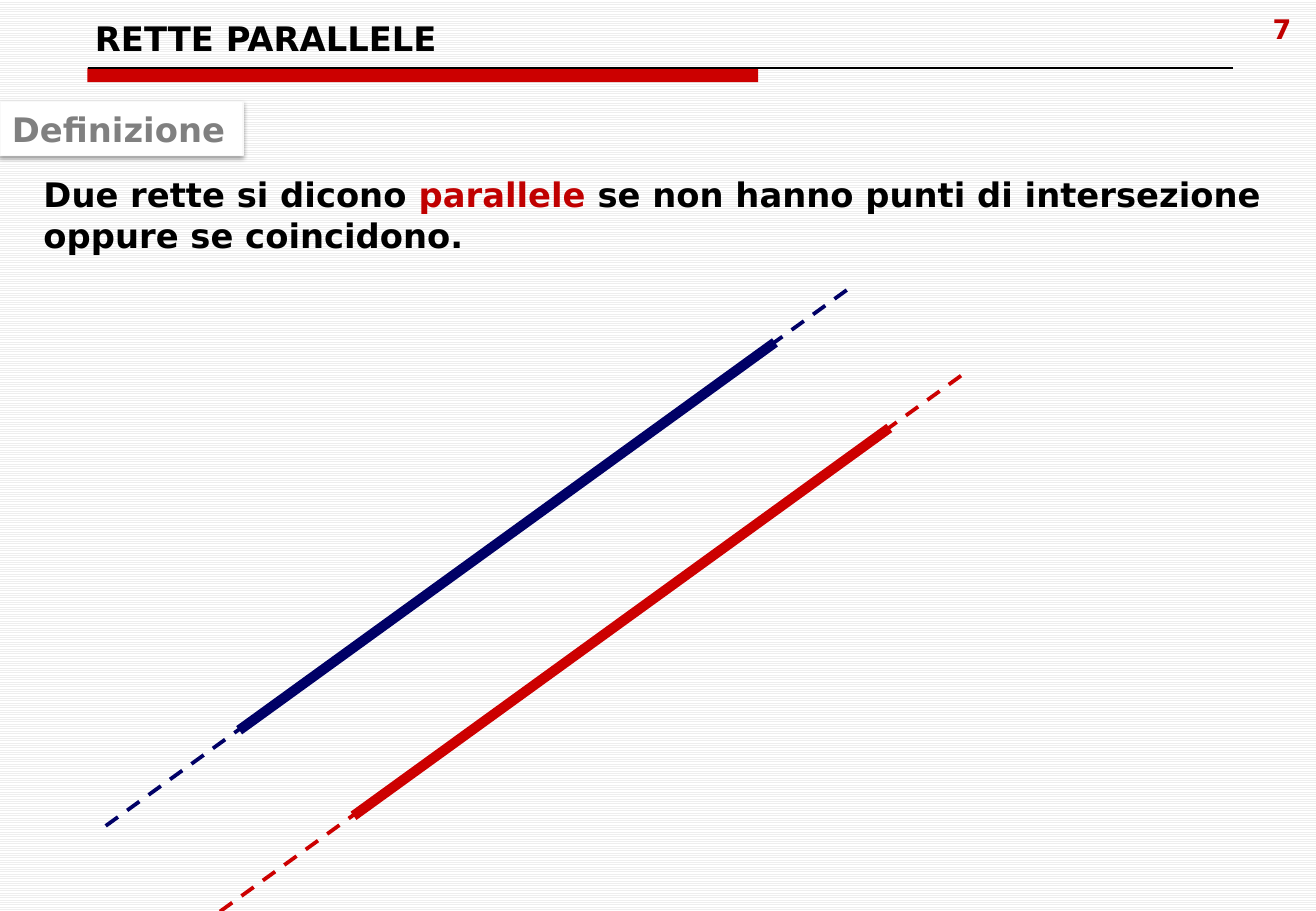
from lxml.etree import SubElement
from pptx import Presentation
from pptx.dml.color import RGBColor
from pptx.enum.dml import MSO_LINE, MSO_PATTERN
from pptx.enum.shapes import MSO_CONNECTOR, MSO_SHAPE
from pptx.enum.text import MSO_ANCHOR, MSO_AUTO_SIZE, PP_ALIGN
from pptx.oxml import parse_xml
from pptx.oxml.ns import nsdecls, qn
from pptx.util import Cm, Pt

BLACK, WHITE, GREY = "000000", "FFFFFF", "808080"
RED, DARK, NAVY = "CC0000", "C00000", "000066"


def color(code):
    return RGBColor.from_string(code)


class Board:
    """Holds the text style and the current slide."""

    font = "DejaVu Sans"

    def __init__(self, slide):
        self.slide = slide

    def paper(self, fore, back):
        fill = self.slide.background.fill
        fill.patterned()
        fill.pattern = MSO_PATTERN.LIGHT_HORIZONTAL
        fill.fore_color.rgb = color(fore)
        fill.back_color.rgb = color(back)

    def letter(self, shape, runs, size=20, align=PP_ALIGN.LEFT,
               anchor=MSO_ANCHOR.TOP):
        """Fill a shape with one bold paragraph of (text, color) runs."""
        frame = shape.text_frame
        frame.word_wrap = True
        frame.auto_size = MSO_AUTO_SIZE.NONE
        frame.vertical_anchor = anchor
        para = frame.paragraphs[0]
        para.alignment = align
        para.font.name, para.font.size, para.font.bold = self.font, Pt(size), True
        for words, code in runs:
            run = para.add_run()
            run.text = words
            run.font.color.rgb = color(code)

    def title(self, words, left, top, width, height):
        shape = self.slide.shapes.title
        shape.left, shape.top = Cm(left), Cm(top)
        shape.width, shape.height = Cm(width), Cm(height)
        self.letter(shape, [(words, BLACK)], anchor=MSO_ANCHOR.BOTTOM)

    def text(self, runs, left, top, width, height, **style):
        box = self.slide.shapes.add_textbox(
            Cm(left), Cm(top), Cm(width), Cm(height))
        self.letter(box, runs, **style)

    def block(self, fill, left, top, width, height, edge=None):
        shape = self.slide.shapes.add_shape(
            MSO_SHAPE.RECTANGLE, Cm(left), Cm(top), Cm(width), Cm(height))
        shape.shadow.inherit = False
        shape.fill.solid()
        shape.fill.fore_color.rgb = color(fill)
        if edge:
            shape.line.color.rgb = color(edge)
            shape.line.width = Pt(0.75)
        else:
            shape.line.fill.background()
        return shape

    def label(self, words, left, top, width, height):
        """Add a white tag with a soft shadow below it."""
        tag = self.block(WHITE, left, top, width, height, edge="F9F9F9")
        effects = tag._element.spPr.find(qn("a:effectLst"))
        effects.append(parse_xml(
            f'<a:outerShdw {nsdecls("a")} blurRad="{Pt(3.1)}" dist="{Pt(1.6)}" '
            'dir="5400000" rotWithShape="0"><a:srgbClr val="000000">'
            '<a:alpha val="38000"/></a:srgbClr></a:outerShdw>'))
        self.letter(tag, [(words, GREY)], anchor=MSO_ANCHOR.MIDDLE)

    def line(self, code, width, start, end, dash=None, shapes=None):
        shapes = shapes or self.slide.shapes
        line = shapes.add_connector(
            MSO_CONNECTOR.STRAIGHT, *map(Cm, start), *map(Cm, end))
        line.line.color.rgb = color(code)
        line.line.width = Pt(width)
        if dash:
            line.line.dash_style = dash
        SubElement(line._element.spPr, qn("a:effectLst"))

    def ray(self, code, right=0, down=0):
        """Add a thick segment with dashed ends, shifted by right and down."""
        group = self.slide.shapes.add_group_shape()

        def move(x, y):
            return x + right, y + down

        # An empty shape collection is falsy, so the group's own is made by name
        for width, start, end, dash in (
                (2.25, move(2.21, 17.27), move(17.86, 5.95), MSO_LINE.DASH),
                (6, move(5, 15.27), move(16.2, 7.16), None)):
            self.line(code, width, start, end, dash, group.shapes)


def main():
    deck = Presentation()
    deck.slide_width, deck.slide_height = Cm(27.51), Cm(19.05)
    board = Board(deck.slides.add_slide(deck.slide_layouts[5]))

    board.paper("EEEEEE", WHITE)
    board.block(RED, 1.83, 1.42, 14.02, 0.3)
    board.line(BLACK, 0.75, (1.83, 1.42), (25.78, 1.42))
    board.text([("7", DARK)], 25.86, 0.13, 1.88, 1.32,
               size=16, align=PP_ALIGN.CENTER)
    board.title("RETTE PARALLELE", 1.73, 0.38, 24.08, 0.97)

    board.label("Definizione", 0, 2.13, 5.08, 1.12)
    board.ray(NAVY)
    board.ray(RED, right=2.39, down=1.79)
    board.text([("Due rette si dicono ", BLACK), ("parallele", DARK),
                (" se non hanno punti di intersezione oppure se coincidono.",
                 BLACK)], 0.66, 3.51, 26.01, 1.96)

    deck.save("out.pptx")


if __name__ == "__main__":
    main()
